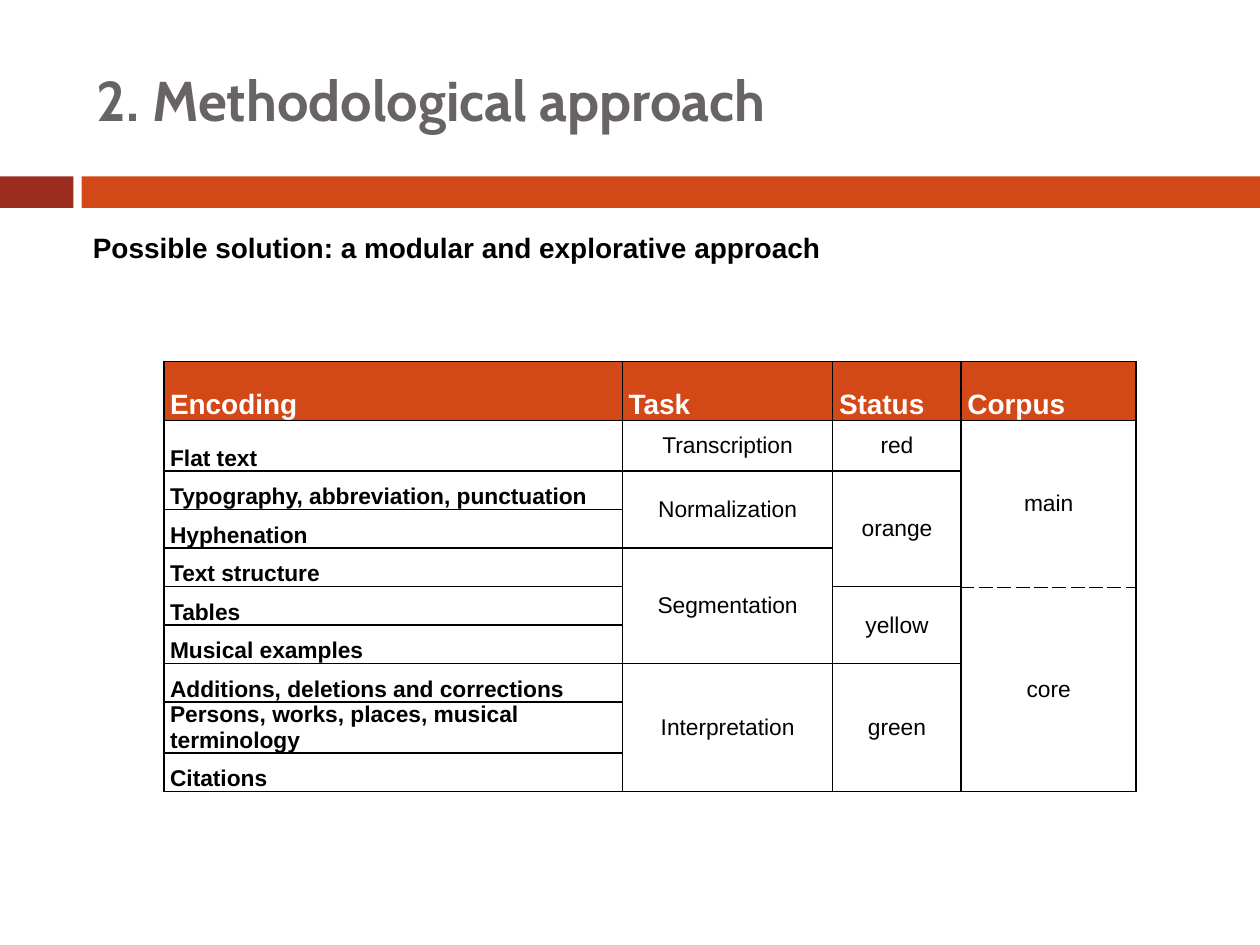
from lxml.etree import SubElement
from pptx import Presentation
from pptx.dml.color import RGBColor
from pptx.enum.shapes import MSO_SHAPE as Shape
from pptx.enum.text import MSO_ANCHOR as Anchor, PP_ALIGN as Align
from pptx.oxml.ns import qn
from pptx.util import Pt

TITLE = "2. Methodological approach"
SUBTITLE = "Possible solution: a modular and explorative approach"
HEADERS = ["Encoding", "Task", "Status", "Corpus"]
ENCODINGS = [
    "Flat text",
    "Typography, abbreviation, punctuation",
    "Hyphenation",
    "Text structure",
    "Tables",
    "Musical examples",
    "Additions, deletions and corrections",
    "Persons, works, places, musical terminology",
    "Citations",
]
GROUPS = [
    [("Transcription", 1), ("Normalization", 2), ("Segmentation", 3), ("Interpretation", 3)],
    [("red", 1), ("orange", 3), ("yellow", 2), ("green", 3)],
    [("main", 4), ("core", 5)],
]
COLUMN_WIDTHS = [262, 120.3, 73.4, 100]
ROW_HEIGHTS = [33.7, 29] + [22] * 6 + [17.3, 22]
BANDS = [(0, 42, "9B2D1F"), (46.6, 673.4, "D34817")]
DASHED_SIDES = {"main": "B", "core": "T"}


def color(value):
    """Turn a hex string into a colour."""
    return RGBColor.from_string(value)


def style_text(frame, size, font, value, bold=True, align=None):
    """Format every run of a text frame."""
    for para in frame.paragraphs:
        para.alignment = align
        for span in para.runs:
            span.font.size = Pt(size)
            span.font.name = font
            span.font.bold = bold
            span.font.color.rgb = color(value)


def add_borders(cell, dashed_side):
    """Draw black cell borders, with one optional dashed side."""
    properties = cell._tc.get_or_add_tcPr()
    for side in "LRTB":
        dashed = side == dashed_side
        width = Pt(0.25 if dashed else 1)
        line = SubElement(properties, qn(f"a:ln{side}"), w=str(width))
        fill = SubElement(line, qn("a:solidFill"))
        SubElement(fill, qn("a:srgbClr"), val="000000")
        SubElement(line, qn("a:prstDash"), val="sysDash" if dashed else "solid")


def format_cell(cell, fill, anchor, dashed_side=None):
    """Set the borders, fill, margins and anchor of a cell."""
    add_borders(cell, dashed_side)
    cell.fill.solid()
    cell.fill.fore_color.rgb = color(fill)
    cell.margin_left = cell.margin_right = Pt(3.6)
    cell.margin_top = cell.margin_bottom = 0
    cell.vertical_anchor = anchor


def add_bands(page):
    """Add the two bars below the title."""
    for left, width, value in BANDS:
        band = page.shapes.add_shape(Shape.RECTANGLE, Pt(left), Pt(100.8), Pt(width), Pt(18))
        band.shadow.inherit = False
        band.fill.solid()
        band.fill.fore_color.rgb = color(value)
        band.line.fill.background()


def add_encoding_table(page):
    """Add the table of encodings with its merged groups."""
    frame = page.shapes.add_table(
        len(ROW_HEIGHTS), len(COLUMN_WIDTHS), Pt(93.6), Pt(206.6),
        Pt(sum(COLUMN_WIDTHS)), Pt(sum(ROW_HEIGHTS)))
    table = frame.table
    for column, width in zip(table.columns, COLUMN_WIDTHS):
        column.width = Pt(width)
    for row, height in zip(table.rows, ROW_HEIGHTS):
        row.height = Pt(height)

    for index, header in enumerate(HEADERS):
        cell = table.cell(0, index)
        cell.text = header
        format_cell(cell, "D34817", Anchor.BOTTOM)
        style_text(cell.text_frame, 16, "Arial", "FFFFFF")

    for index, encoding in enumerate(ENCODINGS, start=1):
        cell = table.cell(index, 0)
        cell.text = encoding
        format_cell(cell, "FFFFFF", Anchor.BOTTOM)
        style_text(cell.text_frame, 13, "Arial", "000000")

    for column, groups in enumerate(GROUPS, start=1):
        top = 1
        for label, count in groups:
            for row in range(top, top + count):
                format_cell(table.cell(row, column), "FFFFFF", Anchor.MIDDLE,
                            DASHED_SIDES.get(label))
            cell = table.cell(top, column)
            cell.text = label
            style_text(cell.text_frame, 13, "Arial", "000000", False, Align.CENTER)
            if count > 1:
                cell.merge(table.cell(top + count - 1, column))
            top += count


def add_title(page):
    """Fill and place the title placeholder."""
    title = page.shapes.title
    title.left, title.top, title.width, title.height = Pt(48.2), Pt(18), Pt(642.2), Pt(77.8)
    title.text_frame.text = TITLE
    title.text_frame.vertical_anchor = Anchor.MIDDLE
    style_text(title.text_frame, 32, "Cabin", "696464", align=Align.LEFT)


def add_subtitle(page):
    """Add the line of text above the table."""
    box = page.shapes.add_textbox(Pt(46), Pt(128.2), Pt(569.5), Pt(26.6))
    box.text_frame.word_wrap = True
    box.text_frame.text = SUBTITLE
    style_text(box.text_frame, 16, "Arial", "000000")


def main():
    """Build and save the slide."""
    deck = Presentation()
    deck.slide_width, deck.slide_height = Pt(720), Pt(540)
    page = deck.slides.add_slide(deck.slide_layouts[5])
    add_bands(page)
    add_encoding_table(page)
    add_title(page)
    add_subtitle(page)
    deck.save("out.pptx")


if __name__ == "__main__":
    main()
